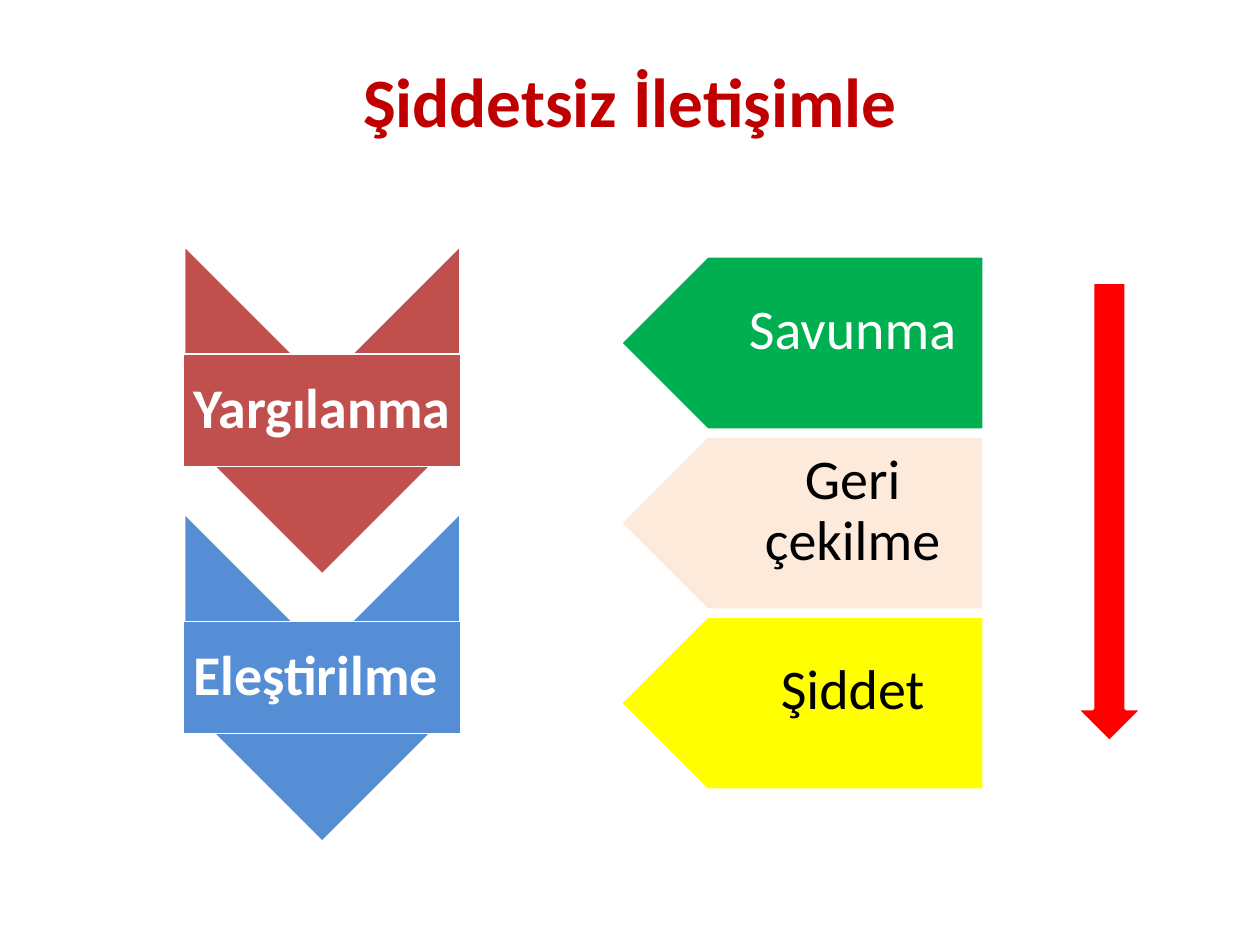
from dataclasses import dataclass
from pptx import Presentation
from pptx import util as u
from pptx.dml import color as col
from pptx.enum import shapes, text

Kind = shapes.MSO_SHAPE


@dataclass(frozen=True)
class Theme:
    font: str = "Calibri"
    head: float = 39.6
    body: float = 32
    title: str = "C00000"
    white: str = "FFFFFF"
    black: str = "000000"
    green: str = "00B050"
    peach: str = "FDEADA"
    gold: str = "FFFF00"
    brick: str = "C0504D"
    blue: str = "558ED5"
    red: str = "FF0000"


T = Theme()


def rgb(code):
    return col.RGBColor.from_string(code)


def apply(item, vals):
    for name, val in vals.items():
        setattr(item, name, val)


def cms(*vals):
    return [u.Cm(val) for val in vals]


def write(shape, words, size, tint, bold=False, pads=(), lead=None):
    frame = shape.text_frame
    sides = ("margin_left", "margin_top", "margin_right", "margin_bottom")
    apply(frame, {"word_wrap": True, "vertical_anchor": text.MSO_ANCHOR.MIDDLE,
                  **dict(zip(sides, cms(*pads)))})
    frame.text = words
    para = frame.paragraphs[0]
    apply(para, {"alignment": text.PP_ALIGN.CENTER, "line_spacing": lead})
    for run in para.runs:
        apply(run.font, {"name": T.font, "size": u.Pt(size), "bold": bold})
        run.font.color.rgb = rgb(tint)


def draw(slide, kind, box, fill, turn=0, line=2):
    shape = slide.shapes.add_shape(kind, *cms(*box))
    shape.rotation = turn
    shape.shadow.inherit = False
    shape.fill.solid()
    shape.fill.fore_color.rgb = rgb(fill)
    shape.line.color.rgb = rgb(T.white)
    shape.line.width = u.Pt(line)
    return shape


def title(slide, box, words):
    shape = slide.shapes.title
    apply(shape, dict(zip(("left", "top", "width", "height"), cms(*box))))
    write(shape, words, T.head, T.title, True)


def plate(slide, box, words, fill, tint):
    x, y, w, h = box
    draw(slide, Kind.PENTAGON, box, fill, 180)
    label = slide.shapes.add_textbox(*cms(x + 0.92, y - 0.23, w - 0.89, h))
    write(label, words, T.body, tint, pads=(1.55, 0.25, 0.46, 0.25), lead=0.9)


def badge(slide, box, words, fill):
    x, y, w, h = box
    shift = (h - w) / 2
    draw(slide, Kind.CHEVRON, (x - shift, y + shift, h, w), fill, 90)
    band = draw(slide, Kind.RECTANGLE, (x, y + 2.22, w, 2.26), fill, line=0.75)
    write(band, words, T.body, T.white, True, (0.05,) * 4, 0.9)


def main():
    deck = Presentation()
    apply(deck, {"slide_width": u.Cm(25.4), "slide_height": u.Cm(19.05)})
    slide = deck.slides.add_slide(deck.slide_layouts[5])
    title(slide, (1.27, 1.93, 22.86, 2.01), "Şiddetsiz İletişimle\v")

    plates = (("Savunma", T.green, T.white),
              ("Geri çekilme", T.peach, T.black),
              ("Şiddet", T.gold, T.black))
    for i, row in enumerate(plates):
        plate(slide, (12.5, 5.16 + 3.63 * i, 7.34, 3.51), *row)

    badges = (("Yargılanma", T.brick), ("Eleştirilme ", T.blue))
    for i, row in enumerate(badges):
        badge(slide, (3.7, 4.92 + 5.39 * i, 5.59, 6.68), *row)

    draw(slide, Kind.DOWN_ARROW, (21.69, 5.69, 1.35, 9.27), T.red)
    deck.save("out.pptx")


if __name__ == "__main__":
    main()
